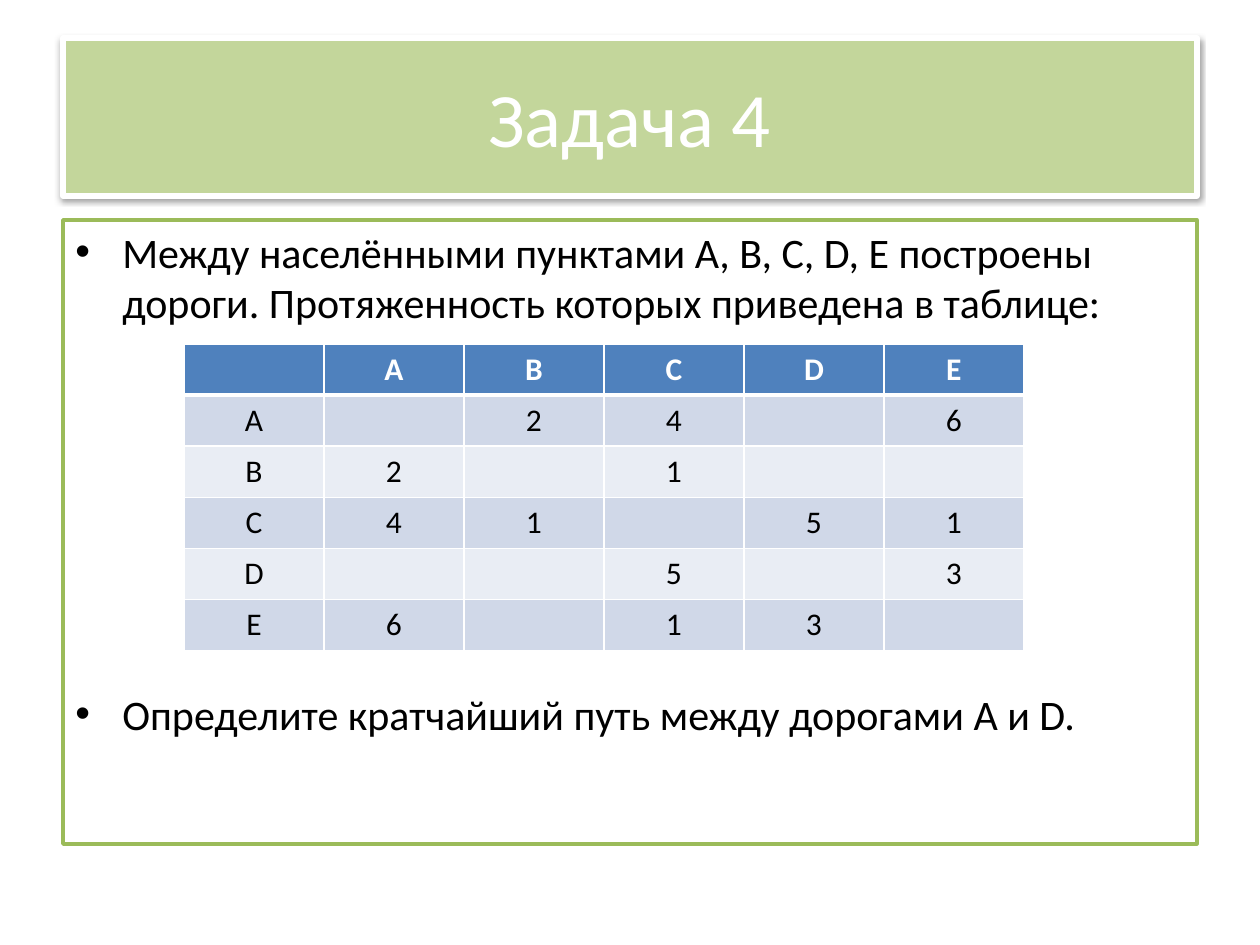
from lxml import etree
from pptx import Presentation
from pptx.dml.color import RGBColor
from pptx.enum.shapes import MSO_SHAPE
from pptx.enum.text import MSO_ANCHOR, PP_ALIGN
from pptx.oxml import parse_xml
from pptx.oxml.ns import qn
from pptx.util import Pt

TITLE = "Задача 4"
TASK = [
    "Между населёнными пунктами A, B, C, D, E построены дороги. "
    "Протяженность которых приведена в таблице:",
    "Определите кратчайший путь между дорогами A и D.",
]
DISTANCES = [
    ["", "A", "B", "C", "D", "E"],
    ["A", "", "2", "4", "", "6"],
    ["B", "2", "", "1", "", ""],
    ["C", "4", "1", "", "5", "1"],
    ["D", "", "", "5", "", "3"],
    ["E", "6", "", "1", "3", ""],
]
COLORS = {
    "white": "FFFFFF", "black": "000000", "title": "C3D69B", "frame": "9BBB59",
    "header": "4F81BD", "odd": "D0D8E8", "even": "E9EDF4",
}
FONT = "Calibri"
RECTANGLE = MSO_SHAPE.RECTANGLE
TOP, MIDDLE = MSO_ANCHOR.TOP, MSO_ANCHOR.MIDDLE
LEFT, CENTER = PP_ALIGN.LEFT, PP_ALIGN.CENTER
DRAWING = "http://schemas.openxmlformats.org/drawingml/2006/main"
SHADOW = (
    f'<a:effectLst xmlns:a="{DRAWING}">'
    '<a:outerShdw blurRad="40000" dist="20000" dir="5400000" rotWithShape="0">'
    f'<a:srgbClr val="{COLORS["black"]}"><a:alpha val="38000"/></a:srgbClr>'
    "</a:outerShdw></a:effectLst>"
)
MARGIN, PANEL_W = 63, 1134
CELL_W, CELL_H = 140, 51
INDENT = 47
TABLE_GAP = 361


def px(length):
    return round(length * 914400 / 126)


def rgb(name):
    return RGBColor.from_string(COLORS[name])


def write(paragraph, text, size, color, align, bold=False):
    paragraph.text = text
    paragraph.alignment = align
    for attribute, value in {"name": FONT, "size": Pt(size), "bold": bold}.items():
        setattr(paragraph.font, attribute, value)
    paragraph.font.color.rgb = rgb(color)


def add_panel(slide, top, height, fill, line, width, anchor):
    panel = slide.shapes.add_shape(RECTANGLE, px(MARGIN), px(top), px(PANEL_W), px(height))
    panel.shadow.inherit = False
    panel.fill.solid()
    panel.fill.fore_color.rgb = rgb(fill)
    panel.line.color.rgb = rgb(line)
    panel.line.width = Pt(width)
    panel.text_frame.word_wrap = True
    panel.text_frame.vertical_anchor = anchor
    return panel


def add_bullet(paragraph):
    properties = paragraph._p.get_or_add_pPr()
    properties.set("marL", str(px(INDENT)))
    properties.set("indent", str(-px(INDENT)))
    etree.SubElement(properties, qn("a:buFont"), typeface="Arial")
    etree.SubElement(properties, qn("a:buChar"), char="•")


def add_borders(cell, widths):
    properties = cell._tc.get_or_add_tcPr()
    for position, (side, width) in enumerate(widths.items()):
        border = etree.Element(qn(f"a:ln{side}"), w=str(Pt(width)))
        fill = etree.SubElement(border, qn("a:solidFill"))
        etree.SubElement(fill, qn("a:srgbClr"), val=COLORS["white"])
        properties.insert(position, border)


def add_title(slide):
    title = add_panel(slide, 38, 158, "title", "white", 3, MIDDLE)
    effects = title._element.spPr.find(qn("a:effectLst"))
    effects.getparent().replace(effects, parse_xml(SHADOW))
    write(title.text_frame.paragraphs[0], TITLE, 44, "white", CENTER)


def add_task(slide):
    frame = add_panel(slide, 220, 624, "white", "frame", 2, TOP).text_frame
    for index, sentence in enumerate(TASK):
        paragraph = frame.add_paragraph() if index else frame.paragraphs[0]
        if index:
            paragraph.space_before = px(TABLE_GAP)
        add_bullet(paragraph)
        write(paragraph, sentence, 24, "black", LEFT)


def add_distances(slide):
    rows, columns = len(DISTANCES), len(DISTANCES[0])
    table = slide.shapes.add_table(
        rows, columns, px(184), px(344), px(columns * CELL_W), px(rows * CELL_H)
    ).table
    table.first_row = table.horz_banding = False
    for column in table.columns:
        column.width = px(CELL_W)
    for r, values in enumerate(DISTANCES):
        table.rows[r].height = px(CELL_H)
        header = r == 0
        fill = "header" if header else ("odd" if r % 2 else "even")
        widths = {"L": 1, "R": 1, "T": 3 if r == 1 else 1, "B": 3 if header else 1}
        for c, value in enumerate(values):
            cell = table.cell(r, c)
            cell.fill.solid()
            cell.fill.fore_color.rgb = rgb(fill)
            add_borders(cell, widths)
            write(cell.text_frame.paragraphs[0], value, 18,
                  "white" if header else "black", CENTER, header)


def main():
    presentation = Presentation()
    presentation.slide_width, presentation.slide_height = px(1260), px(945)
    slide = presentation.slides.add_slide(presentation.slide_layouts[6])
    add_title(slide)
    add_task(slide)
    add_distances(slide)
    presentation.save("out.pptx")


if __name__ == "__main__":
    main()
